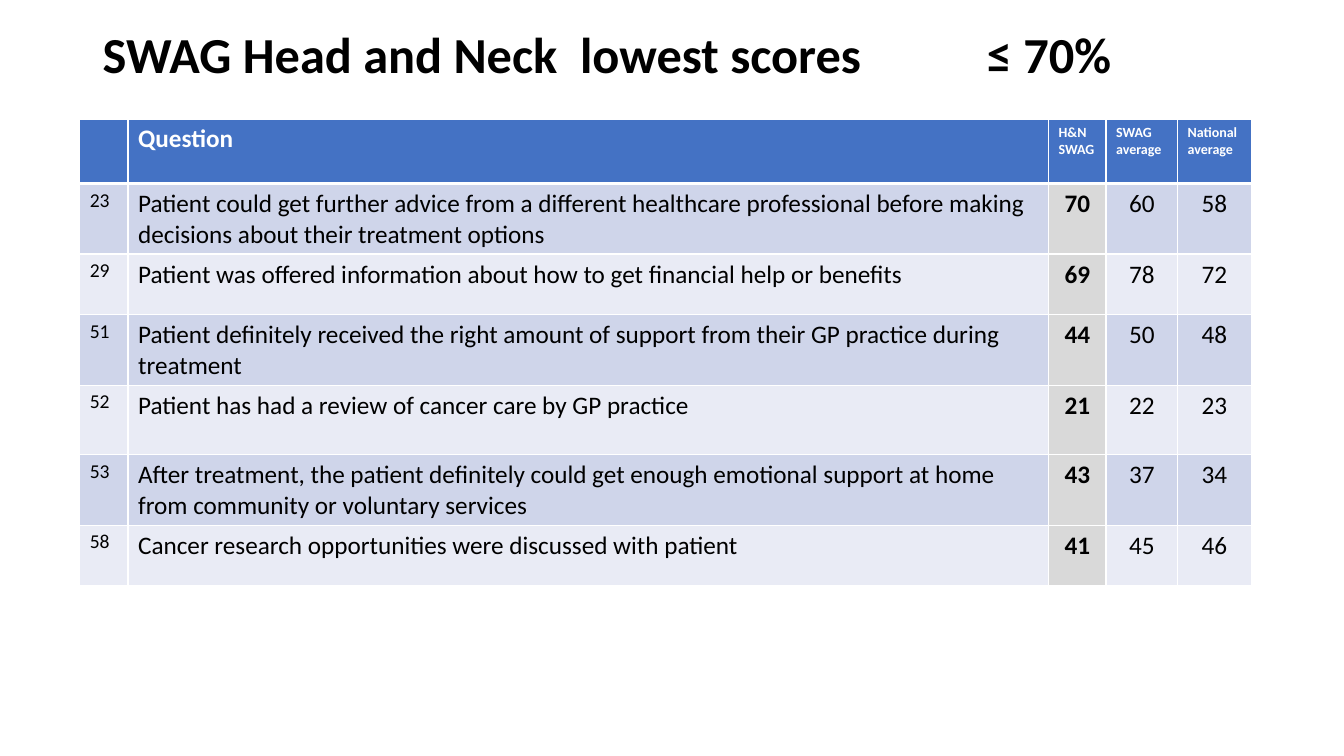
from dataclasses import dataclass

from lxml.etree import SubElement
from pptx import Presentation
from pptx.dml.color import RGBColor
from pptx.enum.text import MSO_ANCHOR, PP_ALIGN
from pptx.oxml import parse_xml
from pptx.oxml.ns import nsdecls, qn
from pptx.util import Inches, Pt

TITLE = "SWAG Head and Neck  lowest scores"
THRESHOLD = "≤ 70%"
HEADERS = ["", "Question", "H&N SWAG", "SWAG average", "National average"]
SCORES = [
    ("23", "Patient could get further advice from a different healthcare professional "
           "before making decisions about their treatment options", 70, 60, 58),
    ("29", "Patient was offered information about how to get financial help or benefits", 69, 78, 72),
    ("51", "Patient definitely received the right amount of support from their GP practice "
           "during treatment", 44, 50, 48),
    ("52", "Patient has had a review of cancer care by GP practice", 21, 22, 23),
    ("53", "After treatment, the patient definitely could get enough emotional support at home "
           "from community or voluntary services", 43, 37, 34),
    ("58", "Cancer research opportunities were discussed with patient", 41, 45, 46),
]
COLUMN_WIDTHS = [0.48, 9.13, 0.57, 0.71, 0.73]
ROW_HEIGHTS = [0.64, 0.7, 0.6, 0.7, 0.69, 0.7, 0.6]
NUMBER, QUESTION, OWN_SCORE = range(3)


@dataclass(frozen=True)
class Theme:
    font: str = "Calibri"
    text: str = "000000"
    white: str = "FFFFFF"
    header: str = "4472C4"
    bands: tuple = ("CFD5EA", "E9EBF5")
    highlight: str = "D9D9D9"
    title_size: int = 36
    body_size: int = 18
    number_size: int = 14
    label_size: int = 10
    border: int = 1
    header_border: int = 3


THEME = Theme()


def add_run(paragraph, text, size, color, bold):
    run = paragraph.add_run()
    run.text = text
    run.font.name = THEME.font
    run.font.size = Pt(size)
    run.font.bold = bold
    run.font.color.rgb = RGBColor.from_string(color)


def add_title(slide):
    box = slide.shapes.add_textbox(Inches(0.92), Inches(0.18), Inches(11.5), Inches(0.78))
    frame = box.text_frame
    frame.word_wrap = True
    frame.vertical_anchor = MSO_ANCHOR.MIDDLE
    paragraph = frame.paragraphs[0]
    paragraph.line_spacing = 0.9
    tab_stops = SubElement(paragraph._p.get_or_add_pPr(), qn("a:tabLst"))
    SubElement(tab_stops, qn("a:tab"), pos=str(Inches(8.77)), algn="l")
    add_run(paragraph, f"{TITLE}\t{THRESHOLD}", THEME.title_size, THEME.text, True)


def set_borders(cell, row):
    top = THEME.header_border if row == 1 else THEME.border
    bottom = THEME.header_border if row == 0 else THEME.border
    sides = {"L": THEME.border, "R": THEME.border, "T": top, "B": bottom}
    properties = cell._tc.get_or_add_tcPr()
    for index, (side, width) in enumerate(sides.items()):
        properties.insert(index, parse_xml(
            f'<a:ln{side} {nsdecls("a")} w="{Pt(width)}"><a:solidFill>'
            f'<a:srgbClr val="{THEME.white}"/></a:solidFill></a:ln{side}>'))


def cell_style(row, column):
    if row == 0:
        size = THEME.label_size if column >= OWN_SCORE else THEME.body_size
        return THEME.header, THEME.white, size, True
    fill = THEME.highlight if column == OWN_SCORE else THEME.bands[(row - 1) % 2]
    size = THEME.number_size if column == NUMBER else THEME.body_size
    return fill, THEME.text, size, column == OWN_SCORE


def add_score_table(slide):
    rows = [HEADERS, *SCORES]
    frame = slide.shapes.add_table(
        len(rows), len(HEADERS), Inches(0.79), Inches(1.18),
        Inches(sum(COLUMN_WIDTHS)), Inches(sum(ROW_HEIGHTS)))
    table = frame.table
    for column, width in zip(table.columns, COLUMN_WIDTHS):
        column.width = Inches(width)
    for row, height in zip(table.rows, ROW_HEIGHTS):
        row.height = Inches(height)
    for row, values in enumerate(rows):
        for column, value in enumerate(values):
            cell = table.cell(row, column)
            fill, color, size, bold = cell_style(row, column)
            cell.fill.solid()
            cell.fill.fore_color.rgb = RGBColor.from_string(fill)
            set_borders(cell, row)
            paragraph = cell.text_frame.paragraphs[0]
            if row and column >= OWN_SCORE:
                paragraph.alignment = PP_ALIGN.CENTER
            if value != "":
                add_run(paragraph, str(value), size, color, bold)


def main():
    presentation = Presentation()
    presentation.slide_width = Inches(13.33)
    presentation.slide_height = Inches(7.5)
    slide = presentation.slides.add_slide(presentation.slide_layouts[6])
    add_title(slide)
    add_score_table(slide)
    presentation.save("out.pptx")


if __name__ == "__main__":
    main()
